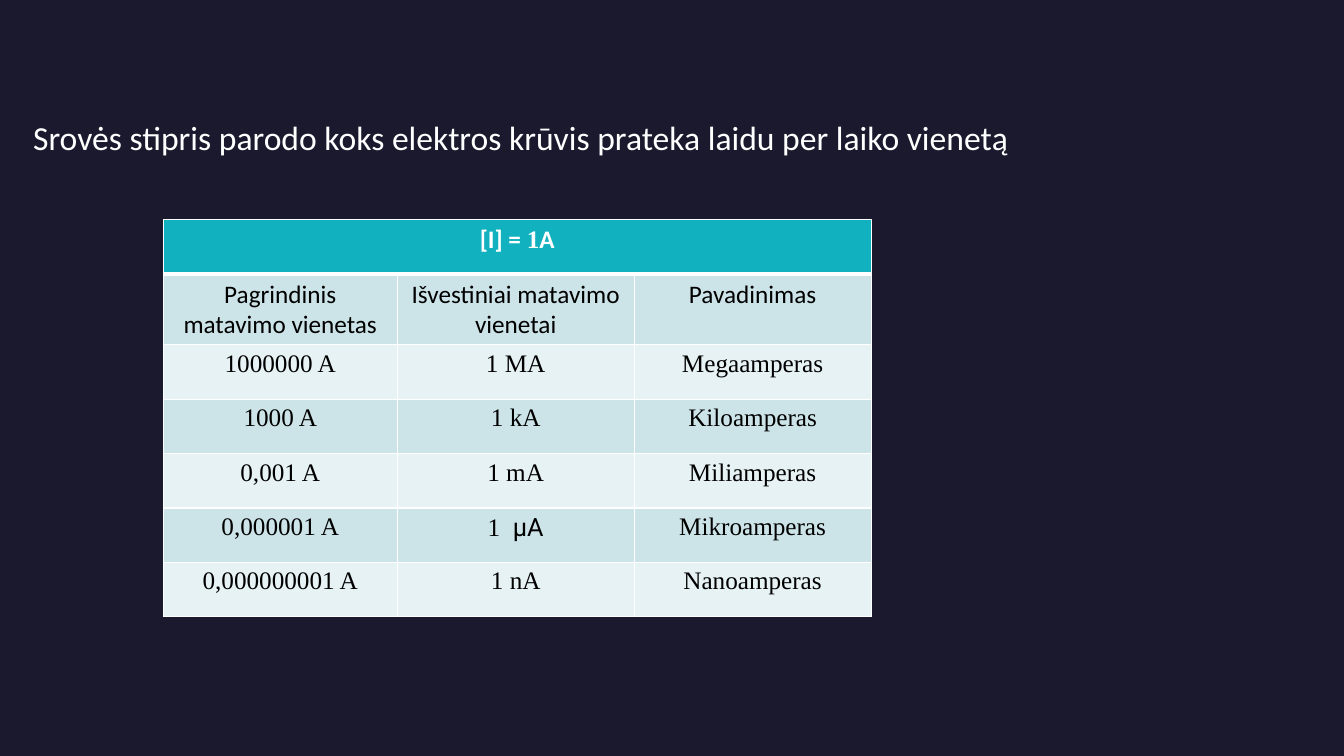
from lxml.etree import SubElement
from pptx import Presentation
from pptx.dml.color import RGBColor
from pptx.enum.text import PP_ALIGN
from pptx.oxml.ns import qn
from pptx.util import Inches, Pt

NAVY = RGBColor(0x1B, 0x19, 0x2E)
WHITE = RGBColor(0xFF, 0xFF, 0xFF)
BLACK = RGBColor(0x00, 0x00, 0x00)
TEAL = RGBColor(0x12, 0xB1, 0xBF)
BAND_DARK = RGBColor(0xCC, 0xE4, 0xE8)
BAND_LIGHT = RGBColor(0xE7, 0xF2, 0xF4)

SANS, SERIF, SYMBOL = "Calibri", "Times New Roman", "Roboto"

STATEMENT = "Srovės stipris parodo koks elektros krūvis prateka laidu per laiko vienetą"
TABLE_TITLE = [("[I] = ", SANS), ("1", SERIF), ("A", SANS)]
COLUMN_NAMES = ["Pagrindinis matavimo vienetas", "Išvestiniai matavimo vienetai", "Pavadinimas"]
UNITS = [
    ("1000000 A", [("1 MA", SERIF)], "Megaamperas"),
    ("1000 A", [("1 kA", SERIF)], "Kiloamperas"),
    ("0,001 A", [("1 mA", SERIF)], "Miliamperas"),
    ("0,000001 A", [("1  ", SERIF), ("μA", SYMBOL)], "Mikroamperas"),
    ("0,000000001 A", [("1 nA", SERIF)], "Nanoamperas"),
]
COLUMN_WIDTHS = [2.32, 2.35, 2.35]
ROW_HEIGHT = 0.54


def add_statement(page):
    box = page.shapes.add_textbox(Inches(0.23), Inches(1.11), Inches(10.15), Inches(0.5))
    box.text_frame.word_wrap = True
    para = box.text_frame.paragraphs[0]
    para.text = STATEMENT
    para.font.name = SANS
    para.font.size = Pt(24)
    para.font.color.rgb = WHITE


def set_borders(cell, bottom=1, top=1):
    properties = cell._tc.get_or_add_tcPr()
    widths = {"a:lnL": 1, "a:lnR": 1, "a:lnT": top, "a:lnB": bottom}
    for tag, width in widths.items():
        line = SubElement(properties, qn(tag), w=str(Pt(width)))
        fill = SubElement(line, qn("a:solidFill"))
        SubElement(fill, qn("a:srgbClr"), val=str(WHITE))


def fill_cell(cell, spans, fill, color=BLACK, bold=False):
    cell.fill.solid()
    cell.fill.fore_color.rgb = fill
    para = cell.text_frame.paragraphs[0]
    para.alignment = PP_ALIGN.CENTER
    para.font.size = Pt(18)
    para.font.bold = bold
    para.font.color.rgb = color
    for text, font_name in spans:
        span = para.add_run()
        span.text = text
        span.font.name = font_name


def add_unit_table(page):
    rows = [[[(name, SANS)] for name in COLUMN_NAMES]]
    rows += [[[(base, SERIF)], derived, [(name, SERIF)]] for base, derived, name in UNITS]
    row_count = len(rows) + 1
    frame = page.shapes.add_table(
        row_count, len(COLUMN_WIDTHS), Inches(1.62), Inches(2.18),
        Inches(sum(COLUMN_WIDTHS)), Inches(ROW_HEIGHT * row_count))
    table = frame.table
    for column, width in zip(table.columns, COLUMN_WIDTHS):
        column.width = Inches(width)
    for row in table.rows:
        row.height = Inches(ROW_HEIGHT)

    # Borders go before the fills in each cell's properties
    for row_index, row in enumerate(table.rows):
        for cell in row.cells:
            set_borders(cell, bottom=3 if row_index == 0 else 1,
                        top=3 if row_index == 1 else 1)

    # Title row across all columns
    title = table.cell(0, 0)
    title.merge(table.cell(0, len(COLUMN_WIDTHS) - 1))
    fill_cell(title, TABLE_TITLE, TEAL, WHITE, bold=True)

    # Column names and units in alternating bands
    for row_index, row in enumerate(rows, start=1):
        band = BAND_DARK if row_index % 2 else BAND_LIGHT
        for column_index, spans in enumerate(row):
            fill_cell(table.cell(row_index, column_index), spans, band)


def main():
    deck = Presentation()
    deck.slide_width, deck.slide_height = Inches(13.33), Inches(7.5)
    page = deck.slides.add_slide(deck.slide_layouts[6])
    page.background.fill.solid()
    page.background.fill.fore_color.rgb = NAVY
    add_statement(page)
    add_unit_table(page)
    deck.save("out.pptx")


if __name__ == "__main__":
    main()
